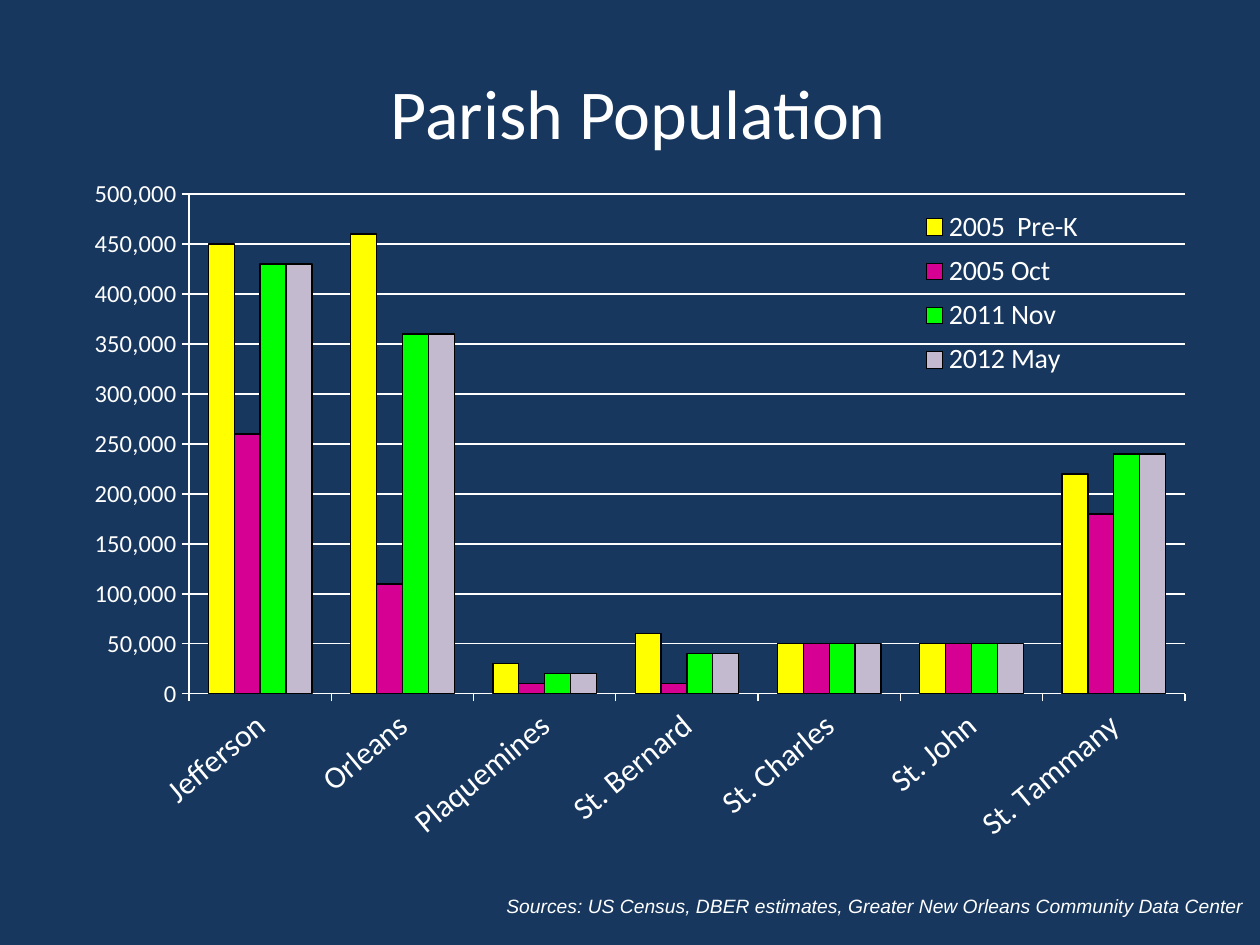
from lxml.etree import SubElement
from pptx import Presentation
from pptx.chart.data import CategoryChartData
from pptx.dml.color import RGBColor
from pptx.enum.chart import (XL_CHART_TYPE, XL_LEGEND_POSITION,
                             XL_TICK_LABEL_POSITION, XL_TICK_MARK)
from pptx.enum.text import PP_ALIGN
from pptx.oxml.ns import qn
from pptx.util import Pt

SCALE = 914400 / 126
COLORS = {"back": "17375E", "text": "FFFFFF", "edge": "000000",
          "pre": "FFFF00", "oct": "D60093", "nov": "00FF00", "may": "C3BACF"}
PARISHES = ["Jefferson", "Orleans", "Plaquemines", "St. Bernard",
            "St. Charles", "St. John", "St. Tammany"]
SERIES = [
    ("2005  Pre-K", "pre", [450000, 460000, 30000, 60000, 50000, 50000, 220000]),
    ("2005 Oct", "oct", [260000, 110000, 10000, 10000, 50000, 50000, 180000]),
    ("2011 Nov", "nov", [430000, 360000, 20000, 40000, 50000, 50000, 240000]),
    ("2012 May", "may", [430000, 360000, 20000, 40000, 50000, 50000, 240000]),
]


def px(n):
    return round(n * SCALE)


def color(name):
    return RGBColor.from_string(COLORS[name])


def set_font(font, size, face="Calibri"):
    font.size, font.name = Pt(size), face
    font.color.rgb = color("text")


def set_line(line, name):
    line.width = Pt(0.75)
    line.color.rgb = color(name)


def set_layout(parent, index, box, size, inner=False):
    """Pin a chart part to a px box inside a chart of the given px size."""
    for old in parent.findall(qn("c:layout")):
        parent.remove(old)
    layout = SubElement(parent, qn("c:layout"))
    parent.insert(index, layout)
    manual = SubElement(layout, qn("c:manualLayout"))
    fracs = [n / whole for n, whole in zip(box, size * 2)]
    parts = [("layoutTarget", "inner")] if inner else []
    parts += [("xMode", "edge"), ("yMode", "edge"), *zip("xywh", fracs)]
    for tag, val in parts:
        SubElement(manual, qn(f"c:{tag}")).set("val", str(val))


def add_text(slide, box, text, size, face="Calibri", align=PP_ALIGN.LEFT,
             wrap=True, italic=False):
    frame = slide.shapes.add_textbox(*map(px, box)).text_frame
    frame.word_wrap = wrap
    para = frame.paragraphs[0]
    para.alignment = align
    run = para.add_run()
    run.text = text
    set_font(run.font, size, face)
    run.font.italic = italic


def style_axis(axis, size):
    set_font(axis.tick_labels.font, size)
    set_line(axis.format.line, "text")
    axis.major_tick_mark = XL_TICK_MARK.OUTSIDE
    axis.minor_tick_mark = XL_TICK_MARK.NONE


def add_bars(slide, box):
    data = CategoryChartData(number_format="#,##0")
    data.categories = PARISHES
    for name, _, vals in SERIES:
        data.add_series(name, vals)
    chart = slide.shapes.add_chart(
        XL_CHART_TYPE.COLUMN_CLUSTERED, *map(px, box), data).chart
    chart.has_title = False
    set_font(chart.font, 18)

    plot = chart.plots[0]
    plot.gap_width, plot.overlap, plot.vary_by_categories = 150, 0, False
    for bars, (_, key, _) in zip(plot.series, SERIES):
        bars.format.fill.solid()
        bars.format.fill.fore_color.rgb = color(key)
        set_line(bars.format.line, "edge")
    area = chart._chartSpace.chart.plotArea
    set_layout(area, 0, (105, 15, 996, 500), box[2:], inner=True)

    cats, vals = chart.category_axis, chart.value_axis
    style_axis(cats, 18)
    cats.tick_label_position = XL_TICK_LABEL_POSITION.LOW
    cats._element.txPr.bodyPr.set("rot", str(-40 * 60000))
    style_axis(vals, 14)
    vals.minimum_scale, vals.maximum_scale, vals.major_unit = 0, 500000, 50000
    vals.tick_labels.number_format = "#,##0"
    vals.tick_labels.number_format_is_linked = False
    vals.has_major_gridlines = True
    set_line(vals.major_gridlines.format.line, "text")

    chart.has_legend = True
    legend = chart.legend
    legend.position = XL_LEGEND_POSITION.RIGHT
    legend.include_in_layout = False
    set_font(legend.font, 16)
    set_layout(legend._element, 1, (828, 21, 180, 187), box[2:])


def main():
    deck = Presentation()
    deck.slide_width, deck.slide_height = px(1260), px(945)
    slide = deck.slides.add_slide(deck.slide_layouts[6])
    fill = slide.background.fill
    fill.solid()
    fill.fore_color.rgb = color("back")
    add_bars(slide, (84, 179, 1124, 688))
    add_text(slide, (53, 63, 1155, 97), " Parish Population", 40,
             align=PP_ALIGN.CENTER)
    add_text(slide, (494, 888, 767, 37),
             "Sources: US Census, DBER estimates, "
             "Greater New Orleans Community Data Center",
             11, "Arial", wrap=False, italic=True)
    deck.save("out.pptx")


if __name__ == "__main__":
    main()
